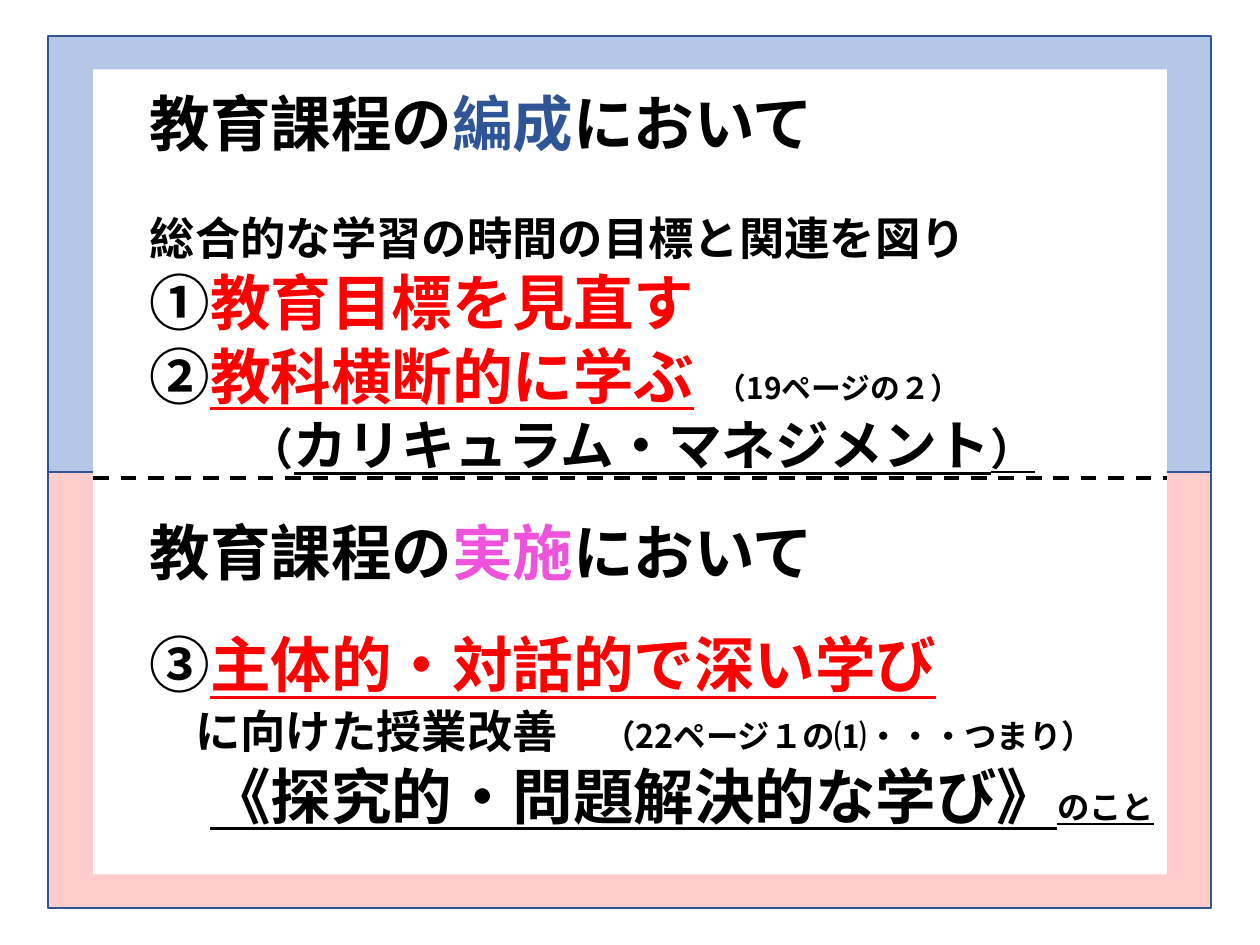
from pptx import Presentation
from pptx.dml.color import RGBColor
from pptx.enum.dml import MSO_LINE
from pptx.enum.shapes import MSO_CONNECTOR, MSO_SHAPE
from pptx.enum.text import MSO_ANCHOR, PP_ALIGN
from pptx.oxml.ns import qn
from pptx.util import Pt
from lxml.etree import SubElement

BLACK = RGBColor(0x00, 0x00, 0x00)
WHITE = RGBColor(0xFF, 0xFF, 0xFF)
RED = RGBColor(0xFF, 0x00, 0x00)
NAVY = RGBColor(0x2F, 0x55, 0x97)
MAGENTA = RGBColor(0xEF, 0x53, 0xDC)
SKY = RGBColor(0xB4, 0xC7, 0xE7)
PINK = RGBColor(0xFF, 0xCC, 0xCC)
BORDER = RGBColor(0x32, 0x54, 0x91)

LARGE, TERM, MEDIUM, BRACKET, SMALL, PAGE_REF = 34.6, 30.7, 25.9, 25.2, 18.5, 17
LINE_HEIGHT = {LARGE: 42, TERM: 37, MEDIUM: 33}
SECTION_GAP = 22


def run(text, size=LARGE, color=BLACK, underline=False):
    return text, size, color, underline


def heading(key_word, color):
    return [run("教育課程の"), run(key_word, color=color), run("において")]


class SlideBuilder:
    """Holds the slide and the text style."""

    font = "Noto Sans CJK JP"

    def __init__(self, slide):
        self.s = slide

    def rect(self, x, y, w, h, fill, line=None):
        sp = self.s.shapes.add_shape(MSO_SHAPE.RECTANGLE, Pt(x), Pt(y), Pt(w), Pt(h))
        sp.shadow.inherit = False
        sp.fill.solid()
        sp.fill.fore_color.rgb = fill
        if line is None:
            sp.line.fill.background()
        else:
            sp.line.color.rgb = line
            sp.line.width = Pt(1)

    def dashed_line(self, x1, x2, y):
        sp = self.s.shapes.add_connector(
            MSO_CONNECTOR.STRAIGHT, Pt(x1), Pt(y), Pt(x2), Pt(y))
        sp.line.color.rgb = BLACK
        sp.line.width = Pt(2.25)
        sp.line.dash_style = MSO_LINE.DASH
        SubElement(sp._element.spPr, qn("a:effectLst"))

    def text(self, x, y, w, h, top, paragraphs):
        tf = self.s.shapes.add_textbox(Pt(x), Pt(y), Pt(w), Pt(h)).text_frame
        frame = {"word_wrap": True, "vertical_anchor": MSO_ANCHOR.TOP,
                 "margin_top": Pt(top), "margin_bottom": 0}
        for name, value in frame.items():
            setattr(tf, name, value)
        for i, (runs, layout) in enumerate(paragraphs):
            p = tf.add_paragraph() if i else tf.paragraphs[0]
            self.paragraph(p, runs, **layout)

    def paragraph(self, p, runs, before=0, indent=0, tab=None):
        size = max(r[1] for r in runs)
        style = {"alignment": PP_ALIGN.LEFT, "space_before": Pt(before),
                 "space_after": Pt(0), "line_spacing": Pt(LINE_HEIGHT[size])}
        for name, value in style.items():
            setattr(p, name, value)
        pPr = p._p.get_or_add_pPr()
        pPr.set("marL", str(Pt(indent)))
        pPr.set("indent", "0")
        if tab:
            tabs = SubElement(pPr, qn("a:tabLst"))
            SubElement(tabs, qn("a:tab"), pos=str(Pt(tab)), algn="l")
        for item in runs:
            self.run(p, *item)

    def run(self, p, text, size, color, underline):
        r = p.add_run()
        r.text = text
        style = {"name": self.font, "size": Pt(size), "bold": True,
                 "underline": underline}
        for name, value in style.items():
            setattr(r.font, name, value)
        r.font.color.rgb = color
        SubElement(r._r.get_or_add_rPr(), qn("a:ea"), typeface=self.font)


def main():
    prs = Presentation()
    prs.slide_width, prs.slide_height = Pt(720), Pt(540)
    b = SlideBuilder(prs.slides.add_slide(prs.slide_layouts[6]))

    b.rect(27.5, 250, 664.5, 269, PINK, BORDER)
    b.rect(27.5, 20.75, 664.5, 249, SKY, BORDER)
    b.rect(53.25, 39.75, 613.5, 460, WHITE)

    b.text(78.5, 0, 597, 481, 48.5, [
        (heading("編成", NAVY), {}),
        ([run("総合的な学習の時間の目標と関連を図り", MEDIUM)], {"before": 27.5}),
        ([run("①"), run("教育目標を見直す", color=RED)], {}),
        ([run("②"), run("教科横断的に学ぶ", color=RED, underline=True),
          run("\t（19ページの２）", PAGE_REF)], {"tab": 345}),
        ([run("（", BRACKET), run("カリキュラム・マネジメント", TERM, underline=True),
          run("）", BRACKET, underline=True)], {"indent": 57}),
        (heading("実施", MAGENTA), {"before": SECTION_GAP}),
        ([run("③"), run("主体的・対話的で深い学び", color=RED, underline=True)],
         {"before": SECTION_GAP}),
        ([run("に向けた授業改善　", MEDIUM),
          run("（22ページ１の⑴・・・つまり）", SMALL)], {"indent": MEDIUM}),
        ([run("《探究的・問題解決的な学び》", underline=True),
          run("のこと", SMALL, underline=True)], {"indent": LARGE}),
    ])
    b.dashed_line(53.25, 666.75, 273)
    prs.save("out.pptx")


if __name__ == "__main__":
    main()
